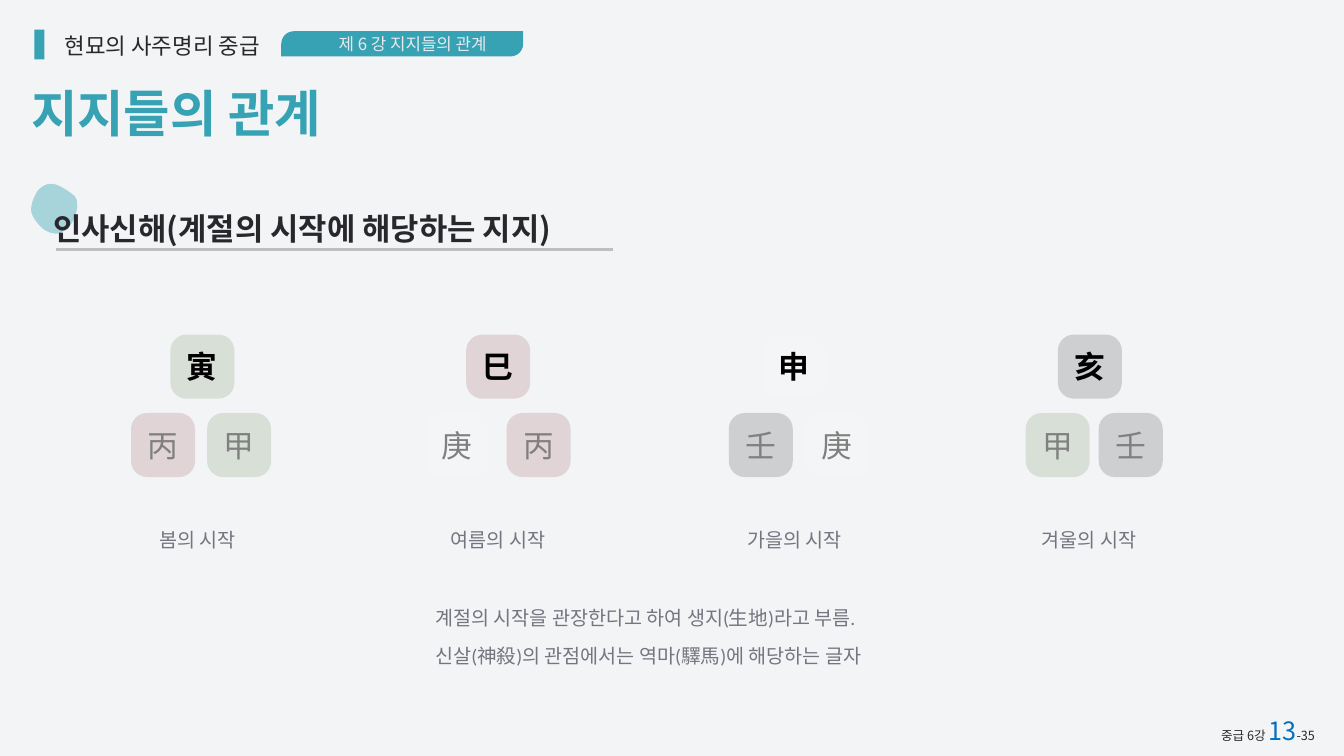
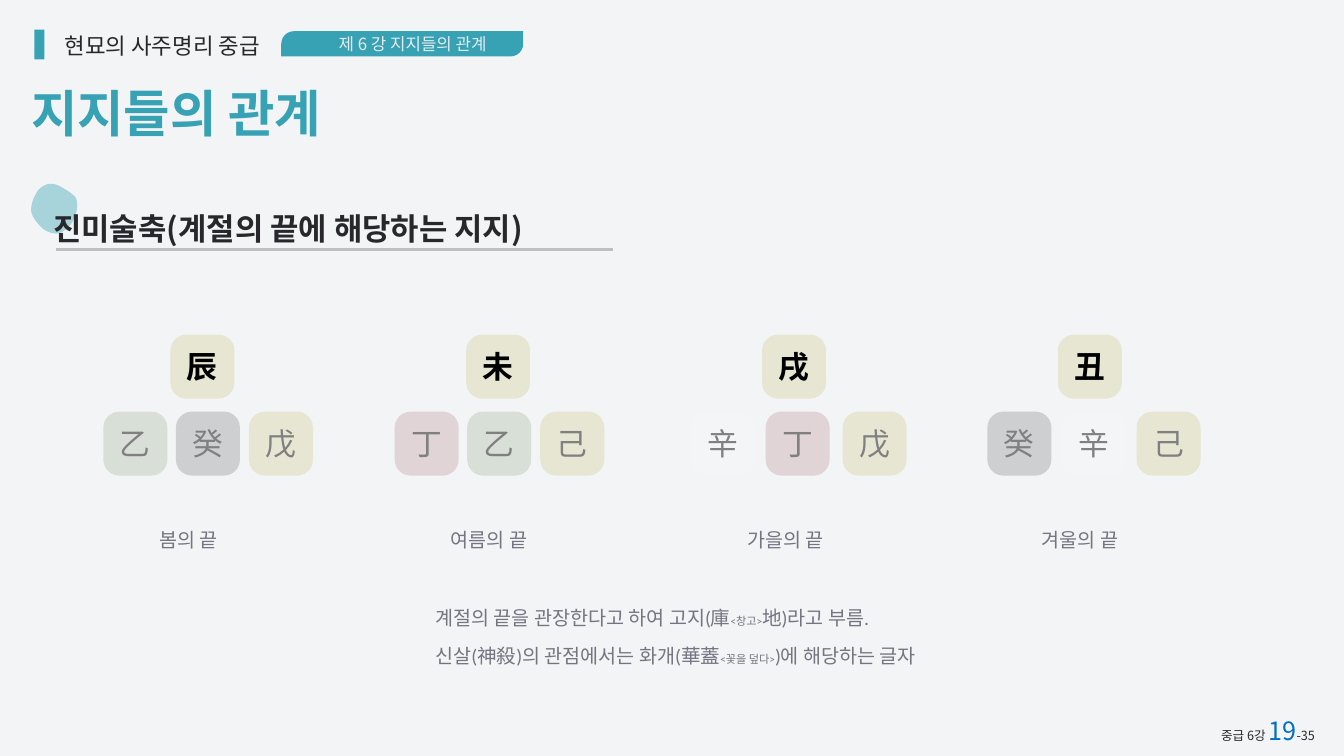
"""Build two slides on the earthly branches that begin and end the seasons."""
from lxml import etree
from pptx import Presentation, util as u
from pptx.dml.color import RGBColor
from pptx.enum import shapes, text
from pptx.oxml.ns import qn

TEAL = RGBColor(0x36, 0xA2, 0xB4)
BACKGROUND = RGBColor(0xF3, 0xF4, 0xF6)
PALE = RGBColor(0xE8, 0xEA, 0xEE)
INK = RGBColor(0x28, 0x28, 0x2C)
BLACK = RGBColor(0, 0, 0)
GREY = RGBColor(0x80, 0x80, 0x80)
BODY_GREY = RGBColor(0x75, 0x75, 0x81)
RULE_GREY = RGBColor(0xBF, 0xBF, 0xBF)
PAGE_BLUE = RGBColor(0, 0x70, 0xC0)
WOOD = RGBColor(0xD8, 0xDF, 0xD7)
FIRE = RGBColor(0xE0, 0xD4, 0xD6)
EARTH = RGBColor(0xE6, 0xE6, 0xD3)
METAL = RGBColor(0xF4, 0xF5, 0xF6)
WATER = RGBColor(0xCE, 0xCF, 0xD1)
ELEMENTS = {"甲": WOOD, "乙": WOOD, "丙": FIRE, "丁": FIRE, "戊": EARTH, "己": EARTH,
            "庚": METAL, "辛": METAL, "壬": WATER, "癸": WATER,
            "寅": WOOD, "巳": FIRE, "申": METAL, "亥": WATER,
            "辰": EARTH, "未": EARTH, "戌": EARTH, "丑": EARTH}
KOREAN = "Noto Sans CJK KR"
LATIN = "Calibri"
LEFT, CENTER, JUSTIFY = text.PP_ALIGN.LEFT, text.PP_ALIGN.CENTER, text.PP_ALIGN.JUSTIFY
TILE = 91.5
SEASONS = ["봄", "여름", "가을", "겨울"]
LABEL_LEFTS = [220.3, 637.2, 1060.6, 1481]
BLOB_START = (44.6, 301.7)
BLOB_CURVES = [
    ((43.9, 293), (47.5, 282.2), (54.7, 271.4)),
    ((60.5, 265.7), (67.7, 261.4), (76.3, 262.8)),
    ((85, 264.2), (100.1, 274.3), (106.6, 280.1)),
    ((112.3, 286.6), (111.6, 300.2), (105.1, 313.9)),
    ((100.8, 324), (91.4, 331.2), (83.5, 333.4)),
    ((76.3, 334.8), (65.5, 331.2), (59, 324.7)),
    ((53.3, 319), (46.1, 310.3), (44.6, 301.7)),
]
LESSONS = [
    {
        "page": "13", "subtitle": "인사신해(계절의 시작에 해당하는 지지)", "stage": "시작",
        "branches": "寅巳申亥", "stem_top": 590,
        "stems": [("丙甲", (187.2, 295.9)), ("庚丙", (607.7, 723.6)),
                  ("壬庚", (1041.1, 1149.8)), ("甲壬", (1465.2, 1569.6))],
        "notes": [[("계절의 시작을 관장한다고 하여 생지(生地)라고 부름.", 28, BODY_GREY)],
                  [("신살(神殺)의 관점에서는 역마(驛馬)에 해당하는 글자", 28, BODY_GREY)]],
    },
    {
        "page": "19", "subtitle": "진미술축(계절의 끝에 해당하는 지지)", "stage": "끝",
        "branches": "辰未戌丑", "stem_top": 588,
        "stems": [("乙癸戊", (147.6, 251.3, 355.7)), ("丁乙己", (563.8, 667.4, 771.8)),
                  ("辛丁戊", (987.1, 1093.7, 1203.8)), ("癸辛己", (1410.5, 1517, 1623.6))],
        "notes": [[("계절의 끝을 관장한다고 하여 고지(庫", 28, BODY_GREY),
                   ("<창고>", 16, BODY_GREY), ("地)라고 부름.", 28, BODY_GREY)],
                  [("신살(神殺)의 관점에서는 화개(華蓋", 28, BODY_GREY),
                   ("<꽃을 덮다>", 16, BODY_GREY), (")에 해당하는 글자", 28, BODY_GREY)]],
    },
]


def write(shape, paragraphs, align=LEFT, bold=False, font=KOREAN, spacing=None,
          anchor=text.MSO_ANCHOR.TOP):
    """Fill a shape with paragraphs of (text, size, colour) runs."""
    frame = shape.text_frame
    frame.word_wrap = True
    frame.auto_size = text.MSO_AUTO_SIZE.NONE
    frame.vertical_anchor = anchor
    for index, pieces in enumerate(paragraphs):
        paragraph = frame.paragraphs[0] if index == 0 else frame.add_paragraph()
        paragraph.alignment = align
        if spacing:
            paragraph.line_spacing = spacing
        for content, size, colour in pieces:
            run = paragraph.add_run()
            run.text = content
            run.font.size = u.Pt(size)
            run.font.bold = bold
            run.font.color.rgb = colour
            run.font.name = font
            etree.SubElement(run.font._element, qn("a:ea"), typeface=KOREAN)


def add_block(slide, kind, left, top, width, height, colour):
    """Add a flat filled preset shape without vertical insets."""
    shape = slide.shapes.add_shape(kind, u.Pt(left), u.Pt(top), u.Pt(width), u.Pt(height))
    shape.shadow.inherit = False
    shape.fill.solid()
    shape.fill.fore_color.rgb = colour
    shape.line.fill.background()
    shape.text_frame.margin_top = shape.text_frame.margin_bottom = 0
    return shape


presentation = Presentation()
presentation.slide_width = u.Pt(1920)
presentation.slide_height = u.Pt(1080)
master_fill = presentation.slide_master.background.fill
master_fill.solid()
master_fill.fore_color.rgb = BACKGROUND

for lesson in LESSONS:
    slide = presentation.slides.add_slide(presentation.slide_layouts[5])
    title = slide.shapes.title
    title.left, title.top, title.width, title.height = u.Pt(37.4), u.Pt(113), u.Pt(476.6), u.Pt(94.3)
    write(title, [[("지지들의 관계", 72, TEAL)]], bold=True)

    add_block(slide, shapes.MSO_SHAPE.RECTANGLE, 49, 42.5, 14.4, 42.5, TEAL)
    badge = add_block(slide, shapes.MSO_SHAPE.ROUND_2_DIAG_RECTANGLE, 401.8, 44.6, 345.6, 36, TEAL)
    badge.adjustments[0], badge.adjustments[1] = 0.5, 0
    badge.text_frame.margin_left = u.Pt(36.7)
    write(badge, [[("제 6 강 지지들의 관계", 24, PALE)]], CENTER, anchor=text.MSO_ANCHOR.MIDDLE)

    rule = slide.shapes.add_connector(shapes.MSO_CONNECTOR.STRAIGHT, u.Pt(80), u.Pt(356.4),
                                      u.Pt(875.5), u.Pt(356.4))
    rule.line.color.rgb = RULE_GREY
    rule.line.width = u.Pt(3)
    etree.SubElement(rule._element.spPr, qn("a:effectLst"))

    outline, start = [], BLOB_START
    for first, second, end in BLOB_CURVES:
        for step in range(1, 9):
            t = step / 8
            outline.append([u.Pt((1 - t) ** 3 * a + 3 * (1 - t) ** 2 * t * b
                                 + 3 * (1 - t) * t ** 2 * c + t ** 3 * d)
                            for a, b, c, d in zip(start, first, second, end)])
        start = end
    builder = slide.shapes.build_freeform(u.Pt(BLOB_START[0]), u.Pt(BLOB_START[1]))
    builder.add_line_segments(outline, close=True)
    blob = builder.convert_to_shape()
    blob.shadow.inherit = False
    blob.fill.solid()
    blob.fill.fore_color.rgb = TEAL
    blob.line.fill.background()
    colour_element = blob._element.spPr.find(qn("a:solidFill"))[0]
    etree.SubElement(colour_element, qn("a:alpha"), val="40000")

    captions = [
        (67.7, 41.8, 328.3, 46, [[("현묘의 사주명리 중급", 32, INK)]], {"align": CENTER}),
        (69.1, 295.9, 933.8, 60.5, [[(lesson["subtitle"], 44, INK)]], {"bold": True}),
        (1737.4, 1018, 180, 51,
         [[("중급 6강 ", 18, INK), (lesson["page"], 36, PAGE_BLUE), ("-35", 18, INK)]], {}),
        (614.9, 841.7, 870.5, 109.4, lesson["notes"],
         {"align": JUSTIFY, "font": LATIN, "spacing": 1.6}),
    ]
    for season, left in zip(SEASONS, LABEL_LEFTS):
        captions.append((left, 730.8, 172.8, 55.4,
                         [[(f"{season}의 {lesson['stage']}", 28, BODY_GREY)]],
                         {"align": JUSTIFY, "font": LATIN, "spacing": 1.6}))
    for left, top, width, height, paragraphs, style in captions:
        caption = slide.shapes.add_textbox(u.Pt(left), u.Pt(top), u.Pt(width), u.Pt(height))
        write(caption, paragraphs, **style)

    tiles = [(branch, 243.4 + 422.6 * column, 478, BLACK)
             for column, branch in enumerate(lesson["branches"])]
    for stems, lefts in lesson["stems"]:
        tiles += [(stem, left, lesson["stem_top"], GREY) for stem, left in zip(stems, lefts)]
    for character, left, top, colour in tiles:
        tile = add_block(slide, shapes.MSO_SHAPE.ROUNDED_RECTANGLE, left, top, TILE, TILE,
                         ELEMENTS[character])
        tile.adjustments[0] = 0.25
        write(tile, [[(character, 44, colour)]], CENTER, bold=colour == BLACK,
              anchor=text.MSO_ANCHOR.MIDDLE)

presentation.save("out.pptx")
